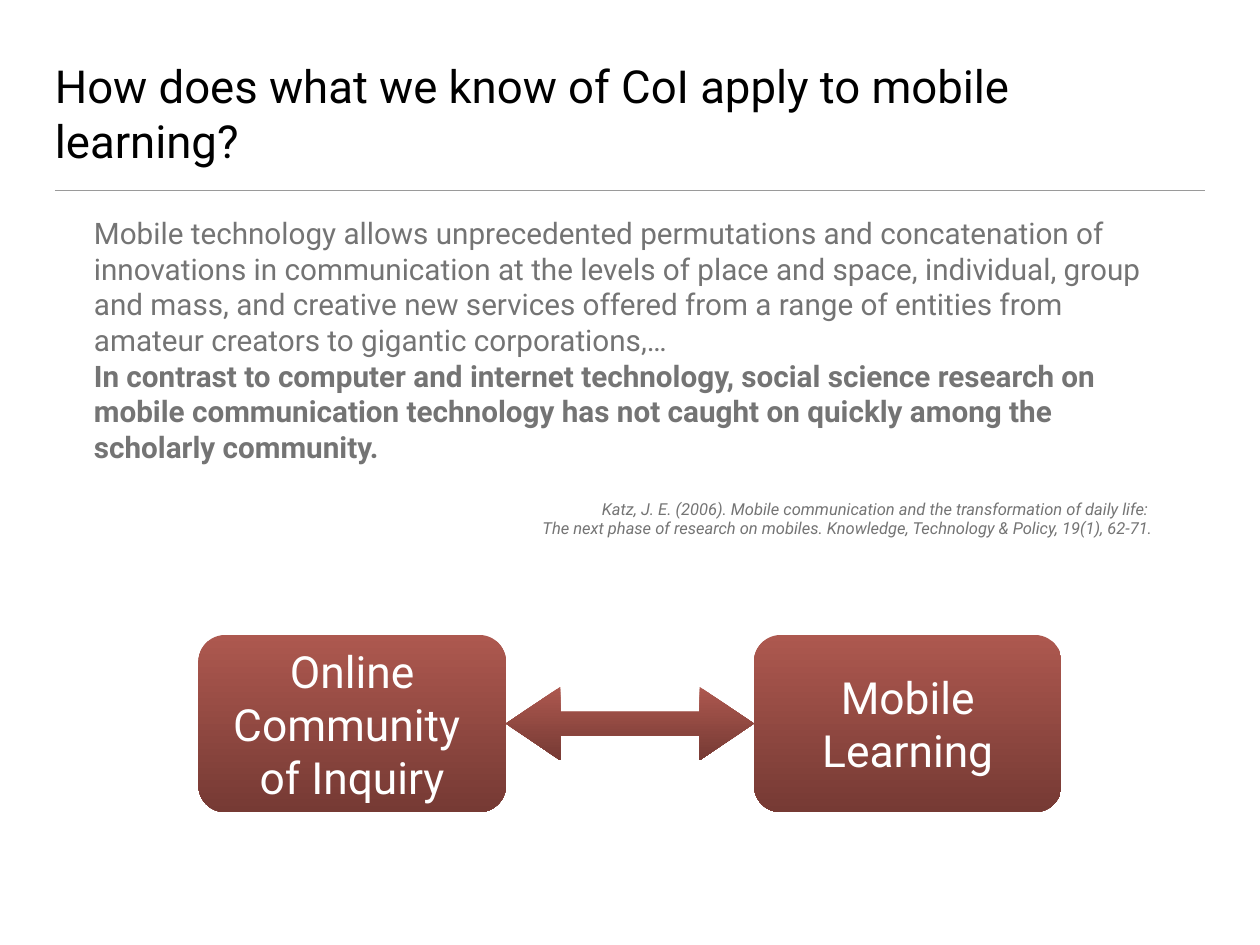
from lxml.etree import SubElement
from pptx import Presentation
from pptx.dml.color import RGBColor
from pptx.enum.shapes import MSO_CONNECTOR, MSO_SHAPE
from pptx.enum.text import MSO_ANCHOR, PP_ALIGN
from pptx.oxml.ns import qn
from pptx.util import Inches, Pt

COLORS = {"title": "000000", "body": "747474", "rule": "9A9A9A", "label": "FFFFFF",
          "top": "AD584F", "bottom": "763A34"}
FONT = "Roboto"
TITLE = "How does what we know of CoI apply to mobile learning?"
QUOTE = ("Mobile technology allows unprecedented permutations and concatenation of innovations "
         "in communication at the levels of place and space, individual, group and mass, and "
         "creative new services offered from a range of entities from amateur creators to "
         "gigantic corporations,… \v"
         "In contrast to computer and internet technology, social science research on mobile "
         "communication technology has not caught on quickly among the scholarly community.")
CITATION = ("Katz, J. E. (2006). Mobile communication and the transformation of daily life: \v"
            "The next phase of research on mobiles. Knowledge, Technology & Policy, 19(1), 62-71.")
TOPICS = ["Online Community \vof Inquiry", "Mobile Learning"]

TOPIC_LEFT, TOPIC_TOP, TOPIC_WIDTH, TOPIC_HEIGHT = 2.24, 7.17, 3.47, 2
ARROW_WIDTH, ARROW_HEIGHT = 2.8, 0.83


def color(name):
    """Return the named colour."""
    return RGBColor.from_string(COLORS[name])


def set_frame(frame, inset, anchor):
    """Wrap a text frame with equal insets."""
    frame.word_wrap = True
    frame.vertical_anchor = anchor
    frame.margin_left = frame.margin_right = Inches(inset)
    frame.margin_top = frame.margin_bottom = Inches(inset)


def write(para, text, size, shade, align=PP_ALIGN.LEFT):
    """Fill a paragraph with styled text."""
    para.text = text
    para.alignment = align
    para.font.name = FONT
    para.font.size = Pt(size)
    para.font.color.rgb = color(shade)


def add_text_box(page, left, top, width, height, anchor):
    """Add a text box without insets and return its frame."""
    box = page.shapes.add_textbox(Inches(left), Inches(top), Inches(width), Inches(height))
    set_frame(box.text_frame, 0, anchor)
    return box.text_frame


def add_block(page, kind, left, top, width, height, adjustments):
    """Add a preset shape with the vertical red gradient."""
    block = page.shapes.add_shape(kind, Inches(left), Inches(top), Inches(width), Inches(height))
    block.shadow.inherit = False
    block.line.fill.background()
    for index, value in enumerate(adjustments):
        block.adjustments[index] = value
    block.fill.gradient()
    block.fill.gradient_angle = 270
    for stop, position, shade in zip(block.fill.gradient_stops, (0, 1), ("top", "bottom")):
        stop.position = position
        stop.color.rgb = color(shade)
    return block


def main():
    """Build the slide and save it."""
    deck = Presentation()
    deck.slide_width, deck.slide_height = Inches(14.22), Inches(10.67)
    page = deck.slides.add_slide(deck.slide_layouts[6])

    rule = page.shapes.add_connector(MSO_CONNECTOR.STRAIGHT, Inches(0.62), Inches(2.15),
                                     Inches(13.6), Inches(2.15))
    rule.line.color.rgb = color("rule")
    rule.line.width = Pt(1)
    SubElement(rule._element.spPr, qn("a:effectLst"))

    title = add_text_box(page, 0.62, 0.36, 12.97, 1.53, MSO_ANCHOR.BOTTOM)
    write(title.paragraphs[0], TITLE, 37, "title")

    body = add_text_box(page, 1.06, 2.43, 11.95, 3.85, MSO_ANCHOR.TOP)
    quote = body.paragraphs[0]
    write(quote, QUOTE, 24.1, "body")
    quote.runs[1].font.bold = True
    citation = body.add_paragraph()
    write(citation, CITATION, 13.4, "body", PP_ALIGN.RIGHT)
    citation.font.italic = True
    citation.space_before = Pt(28)

    for index, topic in enumerate(TOPICS):
        left = TOPIC_LEFT + index * (TOPIC_WIDTH + ARROW_WIDTH)
        block = add_block(page, MSO_SHAPE.ROUNDED_RECTANGLE, left, TOPIC_TOP,
                          TOPIC_WIDTH, TOPIC_HEIGHT, [0.15])
        set_frame(block.text_frame, 0.06, MSO_ANCHOR.MIDDLE)
        write(block.text_frame.paragraphs[0], topic, 36, "label", PP_ALIGN.CENTER)

    add_block(page, MSO_SHAPE.LEFT_RIGHT_ARROW, TOPIC_LEFT + TOPIC_WIDTH,
              TOPIC_TOP + (TOPIC_HEIGHT - ARROW_HEIGHT) / 2, ARROW_WIDTH, ARROW_HEIGHT,
              [0.32, 0.74])

    deck.save("out.pptx")


if __name__ == "__main__":
    main()
